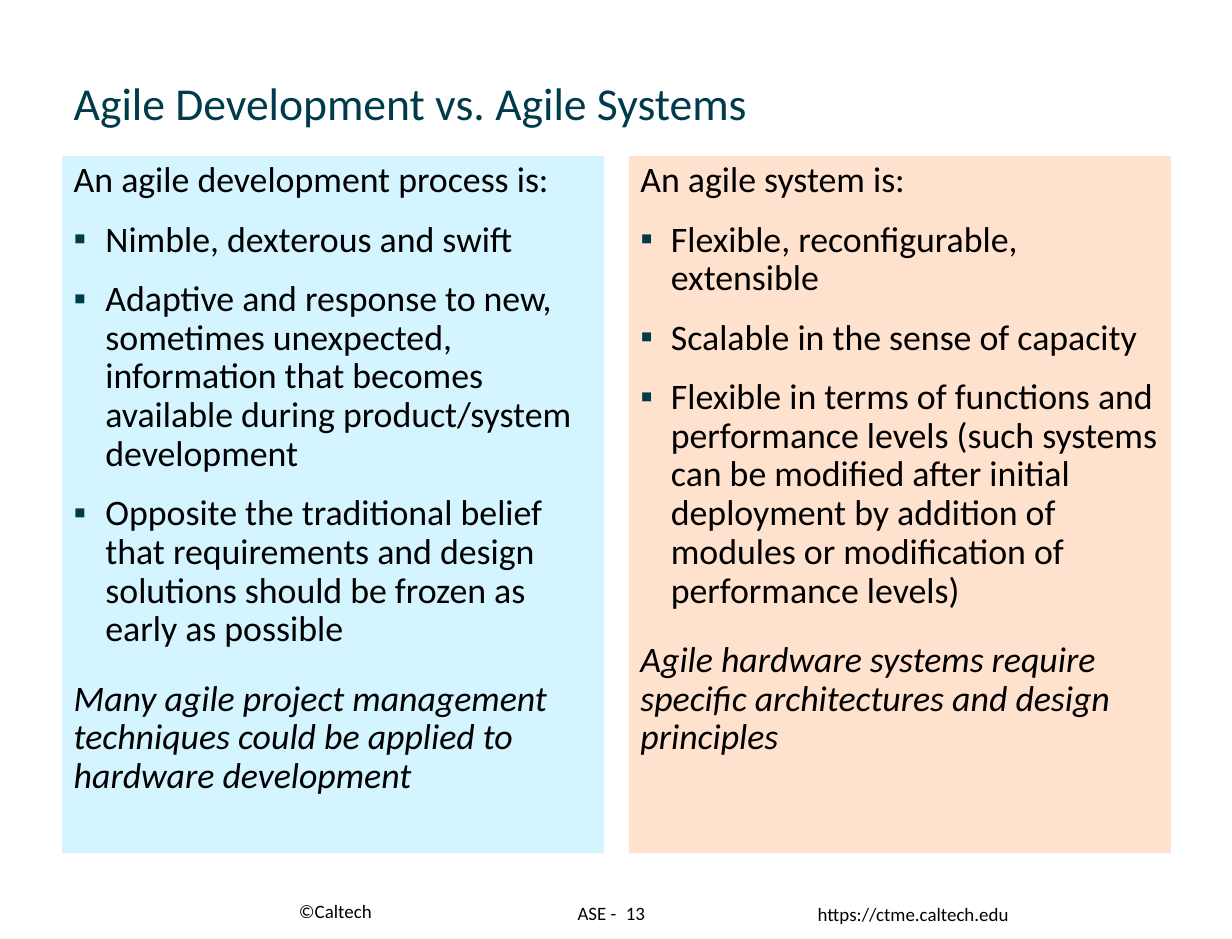
from lxml import etree
from pptx import Presentation
from pptx.dml.color import RGBColor
from pptx.enum.shapes import MSO_SHAPE
from pptx.enum.text import MSO_ANCHOR, PP_ALIGN
from pptx.oxml.ns import qn
from pptx.util import Inches, Pt

RECTANGLE = MSO_SHAPE.RECTANGLE
TOP, MIDDLE, BOTTOM = MSO_ANCHOR.TOP, MSO_ANCHOR.MIDDLE, MSO_ANCHOR.BOTTOM
LEFT, RIGHT = PP_ALIGN.LEFT, PP_ALIGN.RIGHT

FONT = "Calibri"
TEAL = RGBColor(0x00, 0x3B, 0x4C)
BLACK = RGBColor(0x00, 0x00, 0x00)
PALE_BLUE = RGBColor(0xD4, 0xF5, 0xFF)
PALE_ORANGE = RGBColor(0xFF, 0xE2, 0xCE)

PANEL_LEFT, PANEL_STEP = 0.53, 4.83

# Heading, bullets, closing remark, fill and bullet indent of each panel
PANELS = [
    ("An agile development process is:",
     ["Nimble, dexterous and swift",
      "Adaptive and response to new, sometimes unexpected, information that "
      "becomes available during product/system development",
      "Opposite the traditional belief that requirements and design solutions "
      "should be frozen as early as possible"],
     "Many agile project management techniques could be applied to hardware "
     "development",
     PALE_BLUE, 0.27),
    ("An agile system is:",
     ["Flexible, reconfigurable, extensible",
      "Scalable in the sense of capacity",
      "Flexible in terms of functions and performance levels (such systems can "
      "be modified after initial deployment by addition of modules or "
      "modification of performance levels)"],
     "Agile hardware systems require specific architectures and design "
     "principles",
     PALE_ORANGE, 0.26),
]

# Text, left, width, height, anchor and alignment of each footer part
FOOTER_TOP = 7.64
FOOTERS = [
    ("©Caltech", 2.45, 1.23, 0.27, BOTTOM, LEFT),
    ("https://ctme.caltech.edu", 6.87, 2.12, 0.3, TOP, LEFT),
    ("ASE - ", 3.99, 1.4, 0.27, MIDDLE, RIGHT),
    (" 13", 5.2, 0.7, 0.27, MIDDLE, LEFT),
]


def set_font(paragraph, size, color, italic=False):
    font = paragraph.font
    font.name = FONT
    font.size = Pt(size)
    font.color.rgb = color
    font.italic = italic


def add_bullet(paragraph, indent):
    paragraph.level = 1
    props = paragraph._p.get_or_add_pPr()
    props.set("marL", str(Inches(indent)))
    props.set("indent", str(-Inches(indent)))
    color = etree.SubElement(props, qn("a:buClr"))
    etree.SubElement(color, qn("a:srgbClr"), val=str(TEAL))
    etree.SubElement(props, qn("a:buFont"), typeface="Arial")
    etree.SubElement(props, qn("a:buChar"), char="▪")


def add_label(slide, text, left, top, width, height, anchor, align, size, color):
    frame = slide.shapes.add_textbox(
        Inches(left), Inches(top), Inches(width), Inches(height)).text_frame
    frame.word_wrap = True
    frame.vertical_anchor = anchor
    label = frame.paragraphs[0]
    label.text = text
    label.alignment = align
    set_font(label, size, color)
    return label


def add_panel(slide, left, heading, bullets, remark, fill, indent):
    panel = slide.shapes.add_shape(
        RECTANGLE, Inches(left), Inches(1.33), Inches(4.62), Inches(5.94))
    panel.shadow.inherit = False
    panel.fill.solid()
    panel.fill.fore_color.rgb = fill
    panel.line.fill.background()
    frame = panel.text_frame
    frame.word_wrap = True
    frame.vertical_anchor = TOP

    for number, text in enumerate([heading, *bullets, remark]):
        paragraph = frame.add_paragraph() if number else frame.paragraphs[0]
        paragraph.text = text
        paragraph.alignment = LEFT
        paragraph.line_spacing = 0.9
        is_remark = number > len(bullets)
        if number:
            paragraph.space_before = Pt(18.9 if is_remark else 12.6)
            if not is_remark:
                add_bullet(paragraph, indent)
        set_font(paragraph, 22, BLACK, is_remark)


def main():
    prs = Presentation()
    prs.slide_width, prs.slide_height = Inches(10.5), Inches(8)
    slide = prs.slides.add_slide(prs.slide_layouts[6])

    # Title
    title = add_label(slide, "Agile Development vs. Agile Systems",
                      PANEL_LEFT, 0.09, 9.45, 1.07, BOTTOM, LEFT, 28, TEAL)
    title.line_spacing = 0.9

    # Two panels side by side
    for column, panel in enumerate(PANELS):
        add_panel(slide, PANEL_LEFT + column * PANEL_STEP, *panel)

    # Footer
    for text, left, width, height, anchor, align in FOOTERS:
        add_label(slide, text, left, FOOTER_TOP, width, height,
                  anchor, align, 11.6, BLACK)

    prs.save("out.pptx")


if __name__ == "__main__":
    main()
